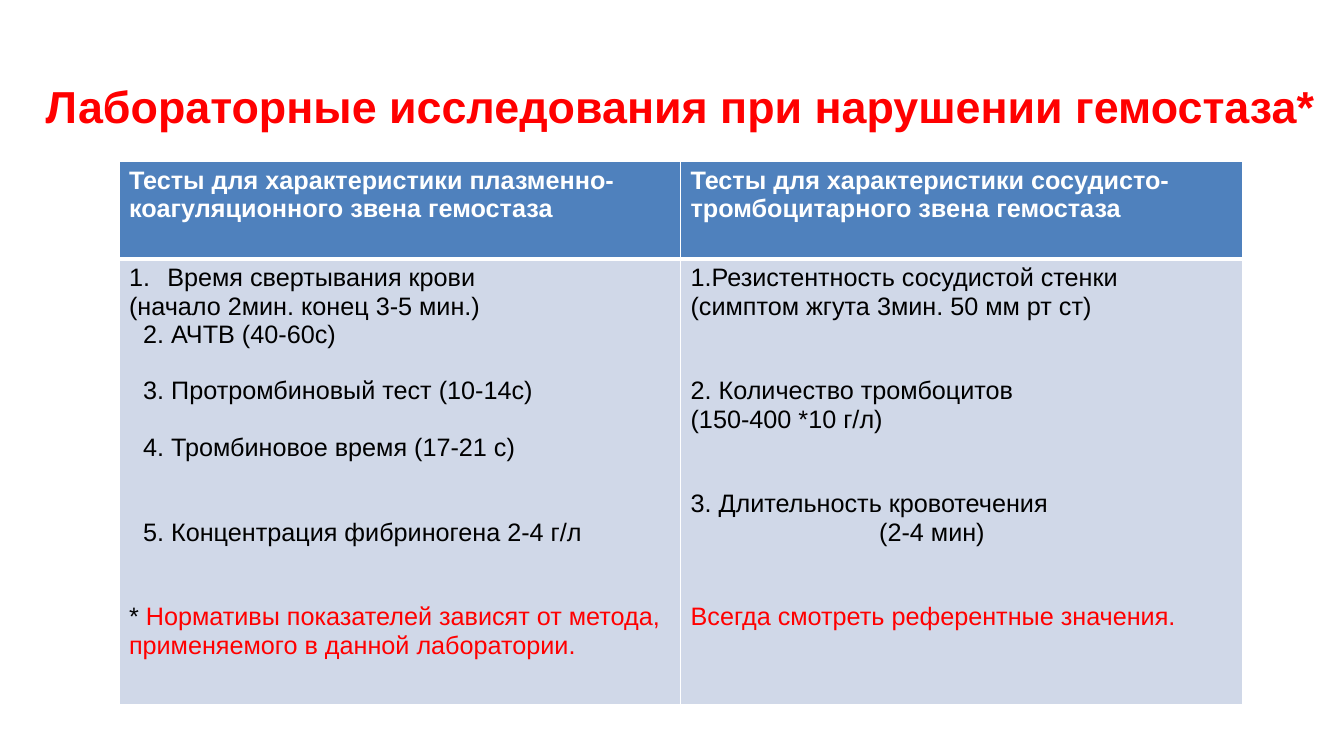
"""Build a slide with a table of laboratory tests for haemostasis disorders."""
from lxml.etree import SubElement
from pptx import Presentation
from pptx.dml.color import RGBColor
from pptx.enum.text import MSO_ANCHOR, MSO_AUTO_SIZE, PP_ALIGN
from pptx.oxml.ns import qn
from pptx.util import Inches, Pt

WHITE, BLACK, RED = "FFFFFF", "000000", "FF0000"
HEADER_FILL, BODY_FILL = "4F81BD", "D0D8E8"
LINE_HEIGHT = 20.2
ITEM_INDENT = 0.14


def add_run(paragraph, text, color, size=18, bold=False):
    run = paragraph.add_run()
    run.text = text
    run.font.name = "Arial"
    run.font.size = Pt(size)
    run.font.bold = bold
    run.font.color.rgb = RGBColor.from_string(color)


def add_border(cell, side, width):
    line = SubElement(cell._tc.get_or_add_tcPr(), qn(f"a:{side}"), w=str(Pt(width)))
    fill = SubElement(line, qn("a:solidFill"))
    SubElement(fill, qn("a:srgbClr"), val=WHITE)


presentation = Presentation()
presentation.slide_width = Inches(13.33)
presentation.slide_height = Inches(7.5)
slide = presentation.slides.add_slide(presentation.slide_layouts[5])

title = slide.shapes.title
title.left, title.top = Inches(0), Inches(0.79)
title.width, title.height = Inches(13.5), Inches(5.35)
title_frame = title.text_frame
title_frame.auto_size = MSO_AUTO_SIZE.NONE
title_frame.word_wrap = True
title_frame.vertical_anchor = MSO_ANCHOR.TOP
title_paragraph = title_frame.paragraphs[0]
title_paragraph.alignment = PP_ALIGN.CENTER
title_paragraph.line_spacing = 0.9
add_run(title_paragraph, "Лабораторные исследования при нарушении гемостаза*", RED, 32, True)

headers = [
    "Тесты для характеристики плазменно-коагуляционного звена гемостаза",
    "Тесты для характеристики сосудисто-тромбоцитарного звена гемостаза",
]
# Each entry: left indent in inches, lines of space before, runs of (text, color)
tests = [
    [
        (0, 0, [("Время свертывания крови", BLACK)]),
        (0, 0, [("(начало 2мин. конец 3-5 мин.)", BLACK)]),
        (ITEM_INDENT, 0, [("2. АЧТВ (40-60с)", BLACK)]),
        (ITEM_INDENT, 1, [("3. Протромбиновый тест (10-14с)", BLACK)]),
        (ITEM_INDENT, 1, [("4. Тромбиновое время (17-21 с)", BLACK)]),
        (ITEM_INDENT, 2, [("5. Концентрация фибриногена 2-4 г/л", BLACK)]),
        (0, 2, [("* ", BLACK),
                ("Нормативы показателей зависят от метода, применяемого в данной лаборатории.", RED)]),
    ],
    [
        (0, 0, [("1.Резистентность сосудистой стенки", BLACK)]),
        (0, 0, [("(симптом жгута 3мин. 50 мм рт ст)", BLACK)]),
        (0, 2, [("2. Количество тромбоцитов", BLACK)]),
        (0, 0, [("(150-400 *10 г/л)", BLACK)]),
        (0, 2, [("3. Длительность кровотечения", BLACK)]),
        (1.87, 0, [("(2-4 мин)", BLACK)]),
        (0, 2, [("Всегда смотреть референтные значения.", RED)]),
    ],
]

table = slide.shapes.add_table(
    2, 2, Inches(1.18), Inches(1.6), Inches(11.14), Inches(5.39)).table
table.rows[0].height = Inches(0.97)
table.rows[1].height = Inches(4.42)

for column, (header, entries) in enumerate(zip(headers, tests)):
    header_cell, body_cell = table.cell(0, column), table.cell(1, column)
    add_run(header_cell.text_frame.paragraphs[0], header, WHITE, bold=True)

    for index, (indent, blank_lines, runs) in enumerate(entries):
        frame = body_cell.text_frame
        paragraph = frame.add_paragraph() if index else frame.paragraphs[0]
        paragraph.space_before = Pt(blank_lines * LINE_HEIGHT)
        paragraph._p.get_or_add_pPr().set("marL", str(Inches(indent)))
        for text, color in runs:
            add_run(paragraph, text, color)

    for cell, fill, bottom, top in ((header_cell, HEADER_FILL, 3, 1), (body_cell, BODY_FILL, 1, 3)):
        for side, width in (("lnL", 1), ("lnR", 1), ("lnT", top), ("lnB", bottom)):
            add_border(cell, side, width)
        cell.fill.solid()
        cell.fill.fore_color.rgb = RGBColor.from_string(fill)

numbered = table.cell(1, 0).text_frame.paragraphs[0]._p.get_or_add_pPr()
numbered.set("marL", str(Inches(0.38)))
numbered.set("indent", str(Inches(-0.38)))
SubElement(numbered, qn("a:buFont"), typeface="+mj-lt")
SubElement(numbered, qn("a:buAutoNum"), type="arabicPeriod")

presentation.save("out.pptx")
